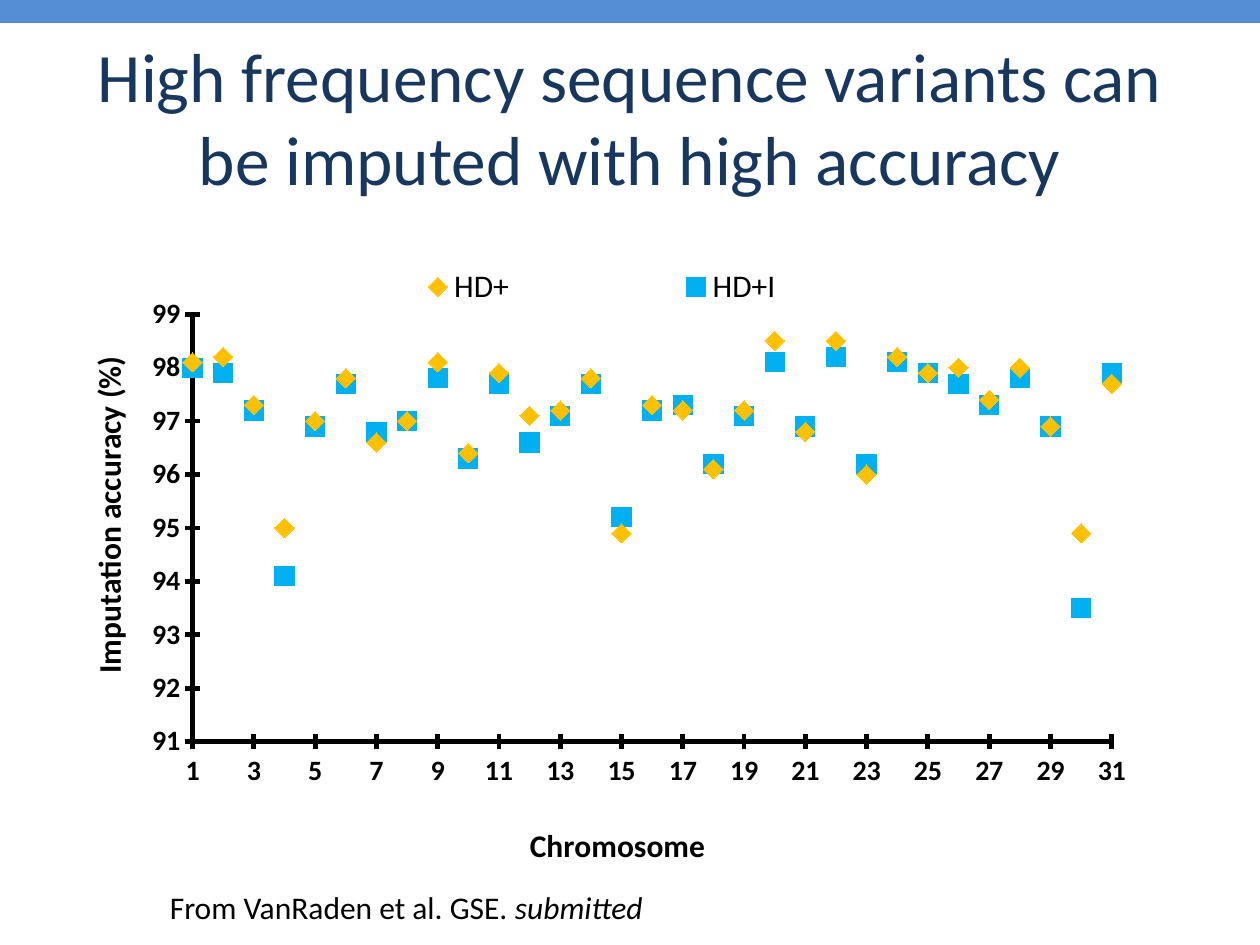
from dataclasses import dataclass
from typing import Any

from lxml.etree import SubElement
from pptx import Presentation
from pptx.chart.data import XyChartData as XyData
from pptx.dml.color import RGBColor as Rgb
from pptx.enum.chart import XL_CHART_TYPE as Kind
from pptx.enum.chart import XL_LEGEND_POSITION as Side
from pptx.enum.chart import XL_MARKER_STYLE as Mark
from pptx.enum.chart import XL_TICK_MARK as Tick
from pptx.enum.shapes import MSO_SHAPE as Form
from pptx.enum.text import MSO_ANCHOR as Anchor
from pptx.enum.text import PP_ALIGN as Align
from pptx.oxml.ns import qn
from pptx.util import Inches, Pt

HUES = {
    "navy": "17375E",
    "band": "558ED5",
    "gold": "FFC000",
    "sky": "00B0F0",
    "ink": "000000",
}


@dataclass
class Trace:
    name: str
    hue: str
    mark: Any
    vals: list[float]


@dataclass
class Scale:
    axis: Any
    title: str
    spot: dict[str, float]
    form: dict[str, float]


TRACES = [
    Trace("HD+", "gold", Mark.DIAMOND, [
        98.1, 98.2, 97.3, 95, 97, 97.8, 96.6, 97, 98.1, 96.4, 97.9,
        97.1, 97.2, 97.8, 94.9, 97.3, 97.2, 96.1, 97.2, 98.5, 96.8,
        98.5, 96, 98.2, 97.9, 98, 97.4, 98, 96.9, 94.9, 97.7]),
    Trace("HD+I", "sky", Mark.SQUARE, [
        98, 97.9, 97.2, 94.1, 96.9, 97.7, 96.8, 97, 97.8, 96.3, 97.7,
        96.6, 97.1, 97.7, 95.2, 97.2, 97.3, 96.2, 97.1, 98.1, 96.9,
        98.2, 96.2, 98.1, 97.9, 97.7, 97.3, 97.8, 96.9, 93.5, 97.9]),
]


def apply(item: Any, form: dict[str, Any]) -> None:
    for key, val in form.items():
        setattr(item, key, val)


def style(font: Any, size: float, hue: str = "ink", **more: Any) -> None:
    apply(font, {"name": "Calibri", "size": Pt(size), **more})
    font.color.rgb = Rgb.from_string(HUES[hue])


def paint(fill: Any, hue: str) -> None:
    fill.solid()
    fill.fore_color.rgb = Rgb.from_string(HUES[hue])


def place(node: Any, spot: dict[str, float], prior: str = "",
          inner: bool = False) -> None:
    for old in node.findall(qn("c:layout")):
        node.remove(old)
    grid = SubElement(node, qn("c:layout"))
    hand = SubElement(grid, qn("c:manualLayout"))
    if inner:
        SubElement(hand, qn("c:layoutTarget")).set("val", "inner")
    for key in ("x", "y"):
        SubElement(hand, qn(f"c:{key}Mode")).set("val", "edge")
    for key, val in spot.items():
        SubElement(hand, qn(f"c:{key}")).set("val", str(val))
    if prior:
        node.find(qn(prior)).addnext(grid)
    else:
        node.insert(0, grid)


def draw_scale(scale: Scale) -> None:
    axis = scale.axis
    apply(axis, {
        "has_major_gridlines": False,
        "has_minor_gridlines": False,
        "major_tick_mark": Tick.CROSS,
        "minor_tick_mark": Tick.NONE,
        **scale.form,
    })
    style(axis.tick_labels.font, 16, bold=True)
    apply(axis.tick_labels, {"number_format": "0",
                             "number_format_is_linked": False})
    paint(axis.format.line.fill, "ink")
    axis.format.line.width = Pt(2.75)
    frame = axis.axis_title.text_frame
    frame.text = scale.title
    style(frame.paragraphs[0].runs[0].font, 18, bold=True)
    place(axis.axis_title._element, scale.spot, "c:tx")


def draw_trace(plot: Any, trace: Trace) -> None:
    plot.format.line.fill.background()
    plot.smooth = False
    apply(plot.marker, {"style": trace.mark, "size": 11})
    paint(plot.marker.format.fill, trace.hue)
    paint(plot.marker.format.line.fill, trace.hue)


def draw_chart(slide: Any) -> None:
    data = XyData()
    for trace in TRACES:
        line = data.add_series(trace.name)
        for num, val in enumerate(trace.vals, 1):
            line.add_data_point(num, val)
    chart = slide.shapes.add_chart(
        Kind.XY_SCATTER, Inches(0.17), Inches(1.92),
        Inches(9.5), Inches(5.08), data).chart
    style(chart.font, 10)
    apply(chart, {"has_title": False, "has_legend": True})
    chart.plots[0].vary_by_categories = False
    apply(chart.legend, {"position": Side.RIGHT, "include_in_layout": False})
    style(chart.legend.font, 18)
    place(chart.legend._element,
          {"x": 0.2, "y": 0.03, "w": 0.57, "h": 0.08}, "c:legendPos")
    area = chart._chartSpace.chart.plotArea
    place(area, {"x": 0.143, "y": 0.113, "w": 0.768, "h": 0.668}, inner=True)
    for scale in (
        Scale(chart.category_axis, "Chromosome", {"x": 0.42, "y": 0.9},
              {"minimum_scale": 1, "maximum_scale": 31, "major_unit": 2}),
        Scale(chart.value_axis, "Imputation accuracy (%)",
              {"x": 0.05, "y": 0.17},
              {"minimum_scale": 91, "maximum_scale": 99, "major_unit": 1}),
    ):
        draw_scale(scale)
    for plot, trace in zip(chart.plots[0].series, TRACES):
        draw_trace(plot, trace)


def draw_title(slide: Any) -> None:
    title = slide.shapes.title
    apply(title, {"left": Inches(0.5), "top": Inches(0.3),
                  "width": Inches(9), "height": Inches(1.25)})
    frame = title.text_frame
    frame.text = "High frequency sequence variants can be imputed with high accuracy"
    apply(frame, {"word_wrap": True, "vertical_anchor": Anchor.MIDDLE})
    frame.paragraphs[0].alignment = Align.CENTER
    style(frame.paragraphs[0].runs[0].font, 39.6, "navy")


def draw_note(slide: Any) -> None:
    box = slide.shapes.add_textbox(
        Inches(1.25), Inches(7), Inches(4), Inches(0.4))
    box.text_frame.word_wrap = False
    para = box.text_frame.paragraphs[0]
    for text, slant in (("From VanRaden et al. GSE. ", False),
                        ("submitted", True)):
        run = para.add_run()
        run.text = text
        style(run.font, 18, italic=slant)


def draw_band(slide: Any) -> None:
    band = slide.shapes.add_shape(
        Form.RECTANGLE, 0, 0, Inches(10), Inches(0.17))
    band.shadow.inherit = False
    paint(band.fill, "band")
    paint(band.line.fill, "band")
    band.line.width = Pt(2)


def main() -> None:
    deck = Presentation()
    apply(deck, {"slide_width": Inches(10), "slide_height": Inches(7.5)})
    slide = deck.slides.add_slide(deck.slide_layouts[5])
    for draw in (draw_title, draw_chart, draw_note, draw_band):
        draw(slide)
    deck.save("out.pptx")


if __name__ == "__main__":
    main()
